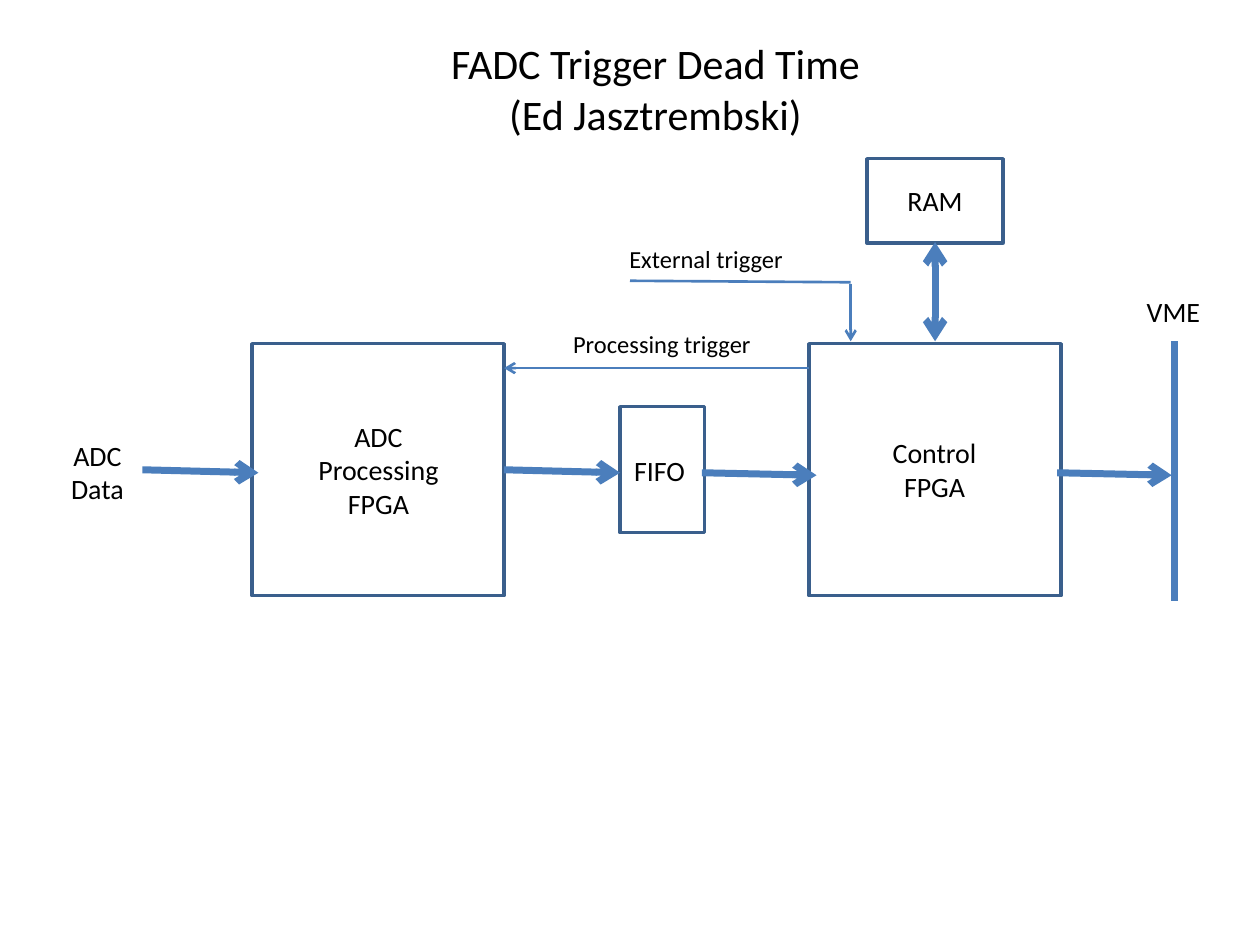
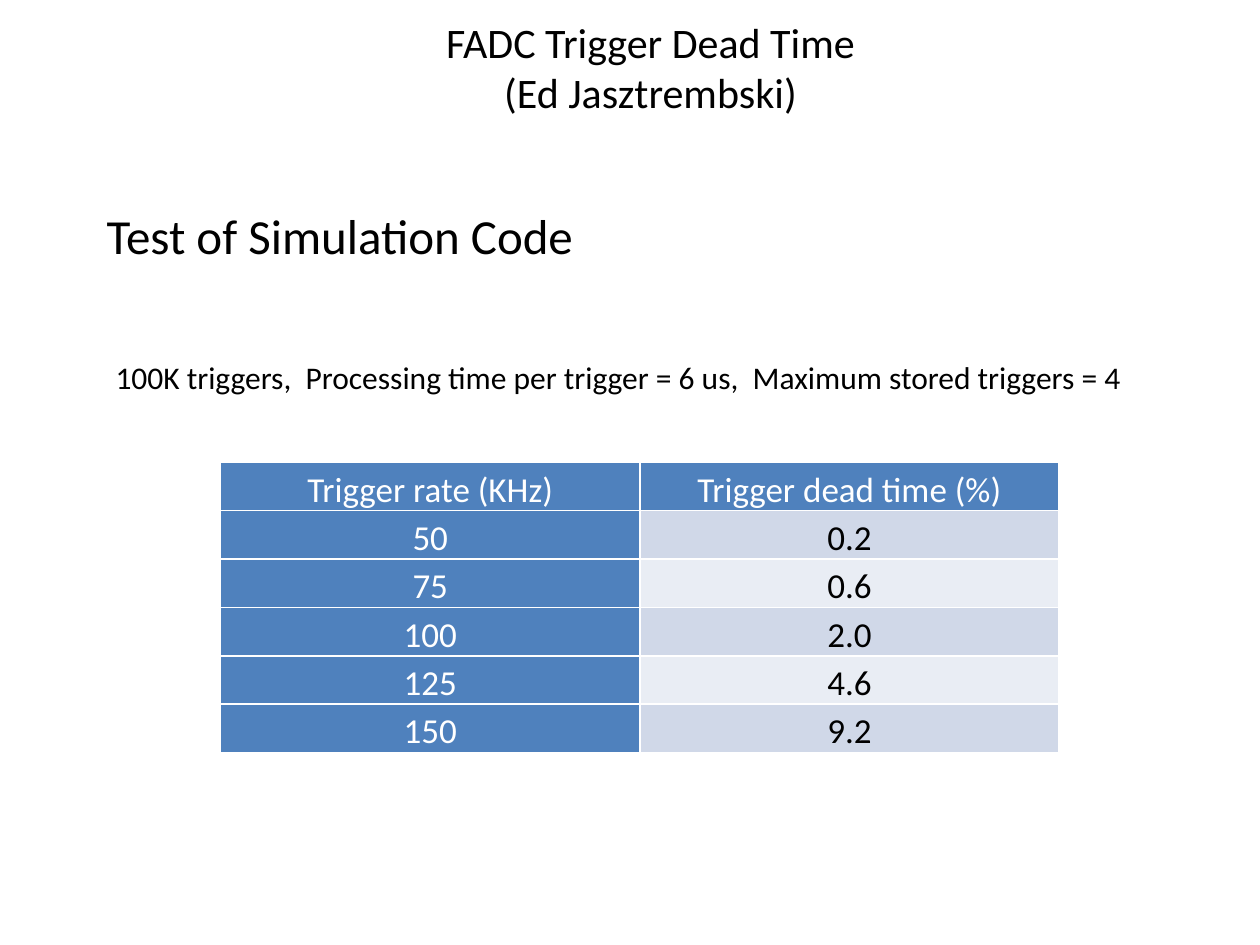
from lxml import etree
from pptx import Presentation
from pptx import util as u
from pptx.dml.color import RGBColor
from pptx.enum import shapes, text
from pptx.oxml import ns

FONT = "Calibri"
BLACK, WHITE = "000000", "FFFFFF"
BOX_BLUE, LINE_BLUE, HEADER_BLUE = "3A5F8C", "4B7EBC", "4F81BD"
BANDS = ["D0D8E8", "E9EDF4"]
TITLE = "FADC Trigger Dead Time\n(Ed Jasztrembski)"
color = RGBColor.from_string


def add_text(slide, wording, left, top, width, height, size, align=text.PP_ALIGN.CENTER):
    box = slide.shapes.add_textbox(u.Cm(left), u.Cm(top), u.Cm(width), u.Cm(height))
    box.text_frame.word_wrap = True
    box.text_frame.text = wording
    for paragraph in box.text_frame.paragraphs:
        paragraph.alignment = align
        paragraph.font.name = FONT
        paragraph.font.size = u.Pt(size)
        paragraph.font.color.rgb = color(BLACK)


def add_line(slide, start, end, weight, arrow_ends=()):
    """Draw a straight line; arrow_ends may hold headEnd (start) and tailEnd (end)."""
    line = slide.shapes.add_connector(
        shapes.MSO_CONNECTOR.STRAIGHT, *[u.Cm(value) for value in start + end])
    line.line.color.rgb = color(LINE_BLUE)
    line.line.width = u.Pt(weight)
    properties = line._element.spPr
    for arrow_end in arrow_ends:
        etree.SubElement(properties.find(ns.qn("a:ln")), ns.qn(f"a:{arrow_end}"), type="arrow")
    etree.SubElement(properties, ns.qn("a:effectLst"))


presentation = Presentation()
presentation.slide_width, presentation.slide_height = u.Cm(25.4), u.Cm(19.05)
blank = presentation.slide_layouts[6]

# Slide 1: trigger block diagram
slide = presentation.slides.add_slide(blank)

blocks = [
    (5.08, 6.93, 5.08, 5.08),   # ADC processing FPGA
    (16.31, 6.93, 5.08, 5.08),  # Control FPGA
    (12.5, 8.2, 1.7, 2.54),     # FIFO
    (17.48, 3.2, 2.74, 1.7),    # RAM
]
for block in blocks:
    shape = slide.shapes.add_shape(
        shapes.MSO_SHAPE.RECTANGLE, *[u.Cm(value) for value in block])
    shape.shadow.inherit = False
    shape.fill.background()
    shape.line.color.rgb = color(BOX_BLUE)
    shape.line.width = u.Pt(2)

data_flow = [
    ((2.87, 9.47), (5.21, 9.53)),
    ((10.16, 9.47), (12.5, 9.53)),
    ((14.15, 9.53), (16.46, 9.58)),
    ((21.31, 9.53), (23.62, 9.58)),
]
for start, end in data_flow:
    add_line(slide, start, end, 4, ["tailEnd"])
add_line(slide, (23.67, 6.88), (23.67, 12.12), 4)  # VME bus
add_line(slide, (18.85, 4.88), (18.85, 6.88), 4, ["headEnd", "tailEnd"])  # RAM access
add_line(slide, (12.7, 5.66), (17.15, 5.69), 1.5)  # external trigger
add_line(slide, (17.15, 5.72), (17.15, 6.88), 1.5, ["tailEnd"])
add_line(slide, (16.31, 7.42), (10.16, 7.42), 1.5, ["tailEnd"])  # processing trigger

labels = [
    ("ADC Processing FPGA", 5.94, 8.33, 3.38, 2.31, 16),
    ("Control FPGA", 17.15, 8.66, 3.38, 1.63, 16),
    ("External trigger", 12.04, 4.8, 4.39, 0.86, 14),
    ("RAM", 17.73, 3.58, 2.24, 0.94, 16),
    ("VME", 22.4, 5.82, 2.51, 0.94, 16),
    ("FIFO", 12.37, 9.02, 1.85, 0.94, 16),
    ("ADC Data", 1.04, 8.71, 1.85, 1.63, 16),
    ("Processing trigger", 11.15, 6.5, 4.39, 0.86, 14),
]
for label in labels:
    add_text(slide, *label)
add_text(slide, TITLE, 7.92, 0.64, 10.59, 2.31, 24)

# Slide 2: simulated dead time
slide = presentation.slides.add_slide(blank)
add_text(slide, TITLE, 7.82, 0.2, 10.59, 3.33, 24)
add_text(slide, "Test of Simulation Code", 1.9, 4.01, 21.59, 1.45, 28, text.PP_ALIGN.LEFT)
add_text(slide, "100K triggers,  Processing time per trigger = 6 us,  Maximum stored triggers = 4",
         2.08, 7.09, 21.59, 1.02, 18, text.PP_ALIGN.LEFT)

dead_times = [
    ("Trigger rate (KHz)", "Trigger dead time (%)"),
    ("50", "0.2"),
    ("75", "0.6"),
    ("100", "2.0"),
    ("125", "4.6"),
    ("150", "9.2"),
]
column_width, row_height = 8.45, 0.97
table = slide.shapes.add_table(
    len(dead_times), 2, u.Cm(4.45), u.Cm(9.32),
    u.Cm(2 * column_width), u.Cm(len(dead_times) * row_height)).table
for row_index, row in enumerate(dead_times):
    table.rows[row_index].height = u.Cm(row_height)
    for column_index, wording in enumerate(row):
        is_heading = row_index == 0 or column_index == 0
        cell = table.cell(row_index, column_index)
        cell.margin_left = cell.margin_right = u.Cm(0.18)
        cell.margin_top = cell.margin_bottom = 0
        cell.text = wording
        paragraph = cell.text_frame.paragraphs[0]
        paragraph.alignment = text.PP_ALIGN.CENTER
        paragraph.line_spacing = 1.15
        paragraph.font.name = FONT
        paragraph.font.size = u.Pt(20)
        paragraph.font.bold = False
        paragraph.font.color.rgb = color(WHITE if is_heading else BLACK)
        properties = cell._tc.get_or_add_tcPr()
        for side in ("lnL", "lnR", "lnT", "lnB"):
            border = etree.SubElement(properties, ns.qn(f"a:{side}"), w=str(u.Pt(1)))
            fill = etree.SubElement(border, ns.qn("a:solidFill"))
            etree.SubElement(fill, ns.qn("a:srgbClr"), val=WHITE)
        cell.fill.solid()
        cell.fill.fore_color.rgb = color(HEADER_BLUE if is_heading else BANDS[(row_index - 1) % 2])

presentation.save("out.pptx")
